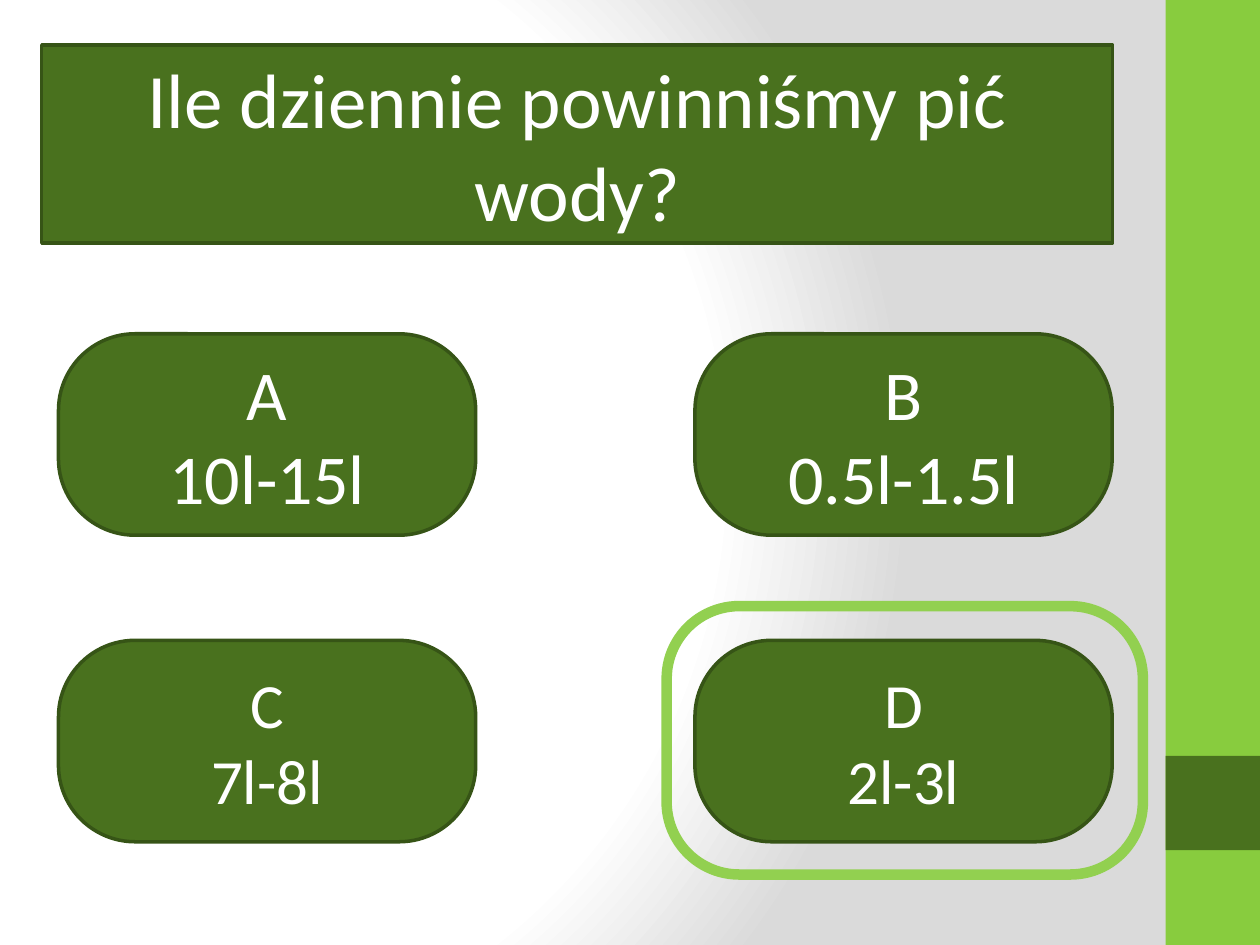
import lxml.etree
import pptx
import pptx.dml.color
import pptx.enum.shapes
import pptx.enum.text
import pptx.oxml
import pptx.oxml.ns
import pptx.util
from dataclasses import dataclass

Cm, Pt = pptx.util.Cm, pptx.util.Pt
RGB = pptx.dml.color.RGBColor.from_string
qn = pptx.oxml.ns.qn
SHAPE = pptx.enum.shapes.MSO_SHAPE


@dataclass(frozen=True)
class Theme:
    font: str = "Calibri"
    lime: str = "88CC3E"
    green: str = "49711E"
    outline: str = "365416"
    highlight: str = "92D050"
    text: str = "FFFFFF"
    bg_light: str = "FFFFFF"
    bg_dark: str = "DADADA"
    question: int = 44
    answer: int = 40
    answer_small: int = 36


theme = Theme()


def style(sp, fill=None, line=None, width=0):
    if fill:
        sp.fill.solid()
        sp.fill.fore_color.rgb = RGB(fill)
    else:
        sp.fill.background()
    if line:
        sp.line.color.rgb = RGB(line)
        sp.line.width = Pt(width)
    else:
        sp.line.fill.background()


def write(sp, lines, size):
    """Fill a shape with centred paragraphs, one per line."""
    tf = sp.text_frame
    frame_format = {
        "word_wrap": True,
        "auto_size": pptx.enum.text.MSO_AUTO_SIZE.NONE,
        "vertical_anchor": pptx.enum.text.MSO_ANCHOR.MIDDLE,
    }
    for name, value in frame_format.items():
        setattr(tf, name, value)
    for i, line in enumerate(lines):
        p = tf.add_paragraph() if i else tf.paragraphs[0]
        p.alignment = pptx.enum.text.PP_ALIGN.CENTER
        r = p.add_run()
        r.text = line
        for name, value in {"name": theme.font, "size": Pt(size)}.items():
            setattr(r.font, name, value)
        r.font.color.rgb = RGB(theme.text)


prs = pptx.Presentation()
prs.slide_width, prs.slide_height = Cm(25.4), Cm(19.05)
s = prs.slides.add_slide(prs.slide_layouts[5])

# Background: circular gradient
s.background.fill.solid()
bg = s.element.find(".//" + qn("p:bgPr"))
stops = "".join(
    f'<a:gs pos="{pos}000"><a:srgbClr val="{color}"/></a:gs>'
    for pos, color in ((0, theme.bg_light), (75, theme.bg_light), (100, theme.bg_dark))
)
gradient = pptx.oxml.parse_xml(
    f'<a:gradFill {pptx.oxml.ns.nsdecls("a")} rotWithShape="1"><a:gsLst>{stops}</a:gsLst>'
    '<a:path path="circle"><a:fillToRect l="20000" t="50000" r="100000" b="50000"/></a:path>'
    "</a:gradFill>"
)
bg.replace(bg.find(qn("a:solidFill")), gradient)

# Side band
for top, height, color in ((0, 19.05, theme.lime), (15.24, 1.9, theme.green)):
    sp = s.shapes.add_shape(SHAPE.RECTANGLE, Cm(23.5), Cm(top), Cm(1.9), Cm(height))
    sp.shadow.inherit = False
    style(sp, color)

# Question: the title placeholder, given a rounded outline
title = s.shapes.title
position = {"left": 0.84, "top": 0.91, "width": 21.59, "height": 3.99}
for name, value in position.items():
    setattr(title, name, Cm(value))
geometry = lxml.etree.SubElement(title.element.spPr, qn("a:prstGeom"), prst="roundRect")
guides = lxml.etree.SubElement(geometry, qn("a:avLst"))
lxml.etree.SubElement(guides, qn("a:gd"), name="adj", fmla="val 34700")
style(title, theme.green, theme.outline, 2)
write(title, ["Ile dziennie powinniśmy pić wody?"], theme.question)

# Answers: two by two
answers = (("A", "10l-15l"), ("B", "0.5l-1.5l"), ("C", "7l-8l"), ("D", "2l-3l"))
columns, rows = (1.18, 14.01), (6.73, 12.91)
sizes = (theme.answer, theme.answer_small)
for i, answer in enumerate(answers):
    row, column = divmod(i, 2)
    sp = s.shapes.add_shape(
        SHAPE.ROUNDED_RECTANGLE, Cm(columns[column]), Cm(rows[row]), Cm(8.41), Cm(4.06)
    )
    sp.shadow.inherit = False
    sp.adjustments[0] = 0.38
    style(sp, theme.green, theme.outline, 2)
    write(sp, answer, sizes[row])

# Ring around the correct answer
ring = s.shapes.add_shape(SHAPE.ROUNDED_RECTANGLE, Cm(13.44), Cm(12.22), Cm(9.6), Cm(5.41))
ring.shadow.inherit = False
ring.adjustments[0] = 0.27
style(ring, line=theme.highlight, width=6)

prs.save("out.pptx")
